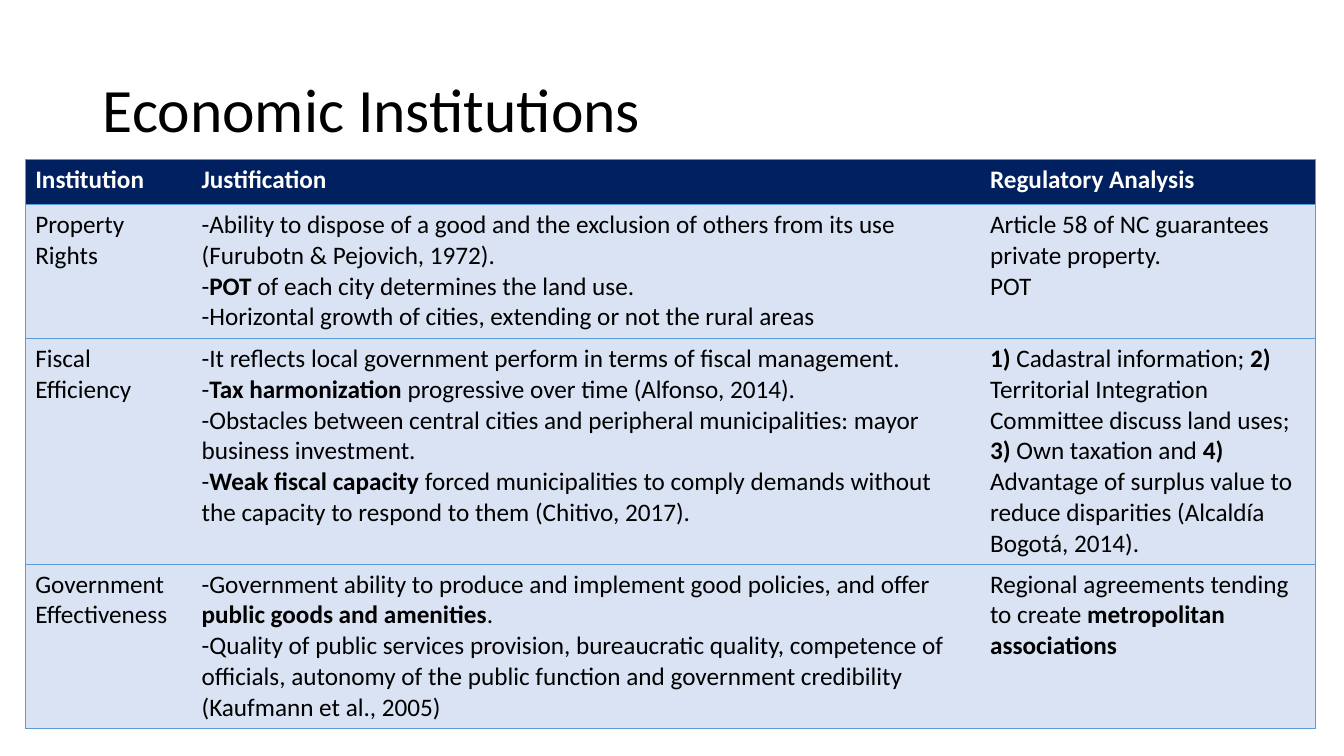
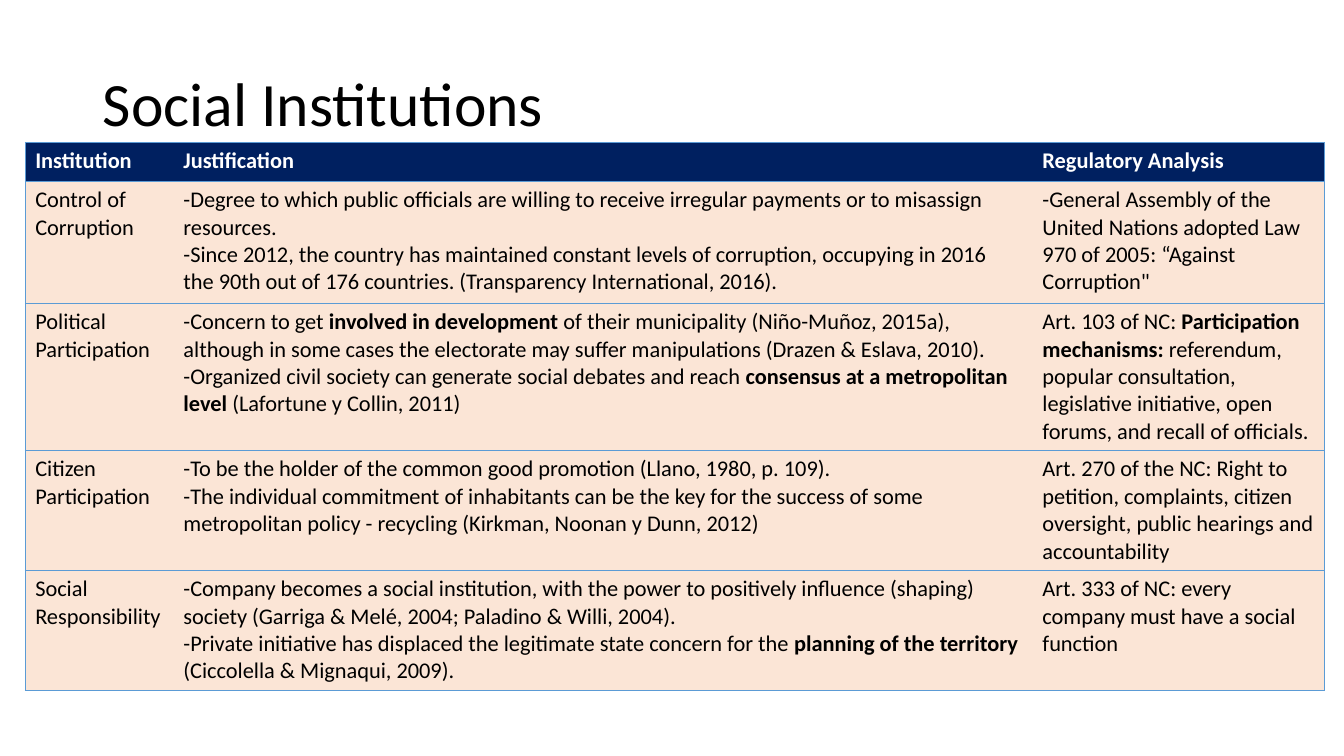
from pptx import Presentation
from pptx.dml.color import RGBColor
from pptx.enum.text import MSO_ANCHOR, MSO_AUTO_SIZE, PP_ALIGN
from pptx.oxml import parse_xml
from pptx.oxml.ns import nsdecls
from pptx.util import Inches, Pt

FONT = "Calibri"
BLACK, WHITE = "000000", "FFFFFF"
NAVY, RULE_BLUE = "002060", "5B9BD5"
PALE_BLUE, PALE_ORANGE = "DAE3F3", "FBE5D6"
TABLE_LEFT, TITLE_TOP = 0.25, 0.65
HEADINGS = (["Institution"], ["Justification"], ["Regulatory Analysis"])

ECONOMIC_ROWS = [
    (["Property Rights"],
     ["-Ability to dispose of a good and the exclusion of others from its use "
      "(Furubotn & Pejovich, 1972).",
      "-**POT** of each city determines the land use.",
      "-Horizontal growth of cities, extending or not the rural areas"],
     ["Article 58 of NC guarantees private property.", "POT"]),
    (["Fiscal Efficiency"],
     ["-It reflects local government perform in terms of fiscal management.",
      "-**Tax harmonization **progressive over time (Alfonso, 2014).",
      "-Obstacles between central cities and peripheral municipalities: "
      "mayor business investment.",
      "-**Weak fiscal capacity **forced municipalities to comply demands "
      "without the capacity to respond to them (Chitivo, 2017)."],
     ["**1)** Cadastral information; **2)** Territorial Integration Committee "
      "discuss land uses; **3)** Own taxation and **4) **Advantage of surplus "
      "value to reduce disparities (Alcaldía Bogotá, 2014)."]),
    (["Government Effectiveness"],
     ["-Government ability to produce and implement good policies, and offer "
      "**public goods and amenities**.",
      "-Quality of public services provision, bureaucratic quality, "
      "competence of officials, autonomy of the public function and "
      "government credibility (Kaufmann et al., 2005)"],
     ["Regional agreements tending to create **metropolitan associations**"]),
]

SOCIAL_ROWS = [
    (["Control of Corruption"],
     ["-Degree to which public officials are willing to receive irregular "
      "payments or to misassign resources.",
      "-Since 2012, the country has maintained constant levels of corruption, "
      "occupying in 2016 the 90th out of 176 countries. "
      "(Transparency International, 2016)."],
     ["-General Assembly of the United Nations adopted Law 970 of 2005: "
      "“Against Corruption\""]),
    (["Political Participation"],
     ["-Concern to get **involved in development **of their municipality "
      "(Niño-Muñoz, 2015a), although in some cases the electorate may suffer "
      "manipulations (Drazen & Eslava, 2010).",
      "-Organized civil society can generate social debates and reach "
      "**consensus at a metropolitan level** (Lafortune y Collin, 2011)"],
     ["Art. 103 of NC: **Participation mechanisms: **referendum, popular "
      "consultation, legislative initiative, open forums, and recall of "
      "officials."]),
    (["Citizen Participation"],
     ["-To be the holder of the common good promotion (Llano, 1980, p. 109).",
      "-The individual commitment of inhabitants can be the key for the "
      "success of some metropolitan policy - recycling "
      "(Kirkman, Noonan y Dunn, 2012)"],
     ["Art. 270 of the NC: Right to petition, complaints, citizen oversight, "
      "public hearings and accountability"]),
    (["Social Responsibility"],
     ["-Company becomes a social institution, with the power to positively "
      "influence (shaping) society (Garriga & Melé, 2004; "
      "Paladino & Willi, 2004).",
      "-Private initiative has displaced the legitimate state concern for the "
      "**planning of the territory **(Ciccolella & Mignaqui, 2009)."],
     ["Art. 333 of NC: every company must have a social function"]),
]


def rgb(value):
    """Turn a hex string into a colour."""
    return RGBColor.from_string(value)


def add_run(paragraph, text, size, color, bold=False):
    """Add one formatted run to a paragraph."""
    run = paragraph.add_run()
    run.text = text
    run.font.name = FONT
    run.font.size = Pt(size)
    run.font.bold = bold
    run.font.color.rgb = rgb(color)


def set_title(slide, text, height):
    """Place and format the slide title."""
    title = slide.shapes.title
    title.left, title.top = Inches(0.92), Inches(TITLE_TOP)
    title.width, title.height = Inches(11.5), Inches(height)
    frame = title.text_frame
    frame.word_wrap = True
    frame.auto_size = MSO_AUTO_SIZE.NONE
    frame.vertical_anchor = MSO_ANCHOR.MIDDLE
    paragraph = frame.paragraphs[0]
    paragraph.alignment = PP_ALIGN.LEFT
    paragraph.line_spacing = 0.9
    add_run(paragraph, text, 44, BLACK)


def set_borders(cell, visible_sides):
    """Rule the named sides of a cell and clear the others."""
    properties = cell._tc.get_or_add_tcPr()
    for side in "LRTB":
        if side in visible_sides:
            line = f'<a:solidFill><a:srgbClr val="{RULE_BLUE}"/></a:solidFill>'
        else:
            line = "<a:noFill/>"
        properties.append(parse_xml(
            f'<a:ln{side} {nsdecls("a")} w="{Pt(0.5)}">{line}</a:ln{side}>'))


def fill_cell(cell, paragraphs, size, color, fill, bold=False):
    """Write a cell's paragraphs, with ** around bold phrases."""
    cell.fill.solid()
    cell.fill.fore_color.rgb = rgb(fill)
    frame = cell.text_frame
    for number, text in enumerate(paragraphs):
        paragraph = frame.add_paragraph() if number else frame.paragraphs[0]
        for part, phrase in enumerate(text.split("**")):
            if phrase:
                add_run(paragraph, phrase, size, color, bold or part % 2 == 1)


def add_institution_table(slide, top, widths, heights, rows, size, fill):
    """Add the ruled table with its navy heading row."""
    table = slide.shapes.add_table(
        len(heights), len(widths), Inches(TABLE_LEFT), Inches(top),
        Inches(sum(widths)), Inches(sum(heights))).table
    table.horz_banding = False
    for column, width in zip(table.columns, widths):
        column.width = Inches(width)
    for row, height in zip(table.rows, heights):
        row.height = Inches(height)
    for row_number, contents in enumerate([HEADINGS] + rows):
        heading = row_number == 0
        for column_number, paragraphs in enumerate(contents):
            cell = table.cell(row_number, column_number)
            set_borders(cell, ("LTB", "TB", "RTB")[column_number])
            fill_cell(cell, paragraphs, size, WHITE if heading else BLACK,
                      NAVY if heading else fill, heading)


def add_institution_slide(deck, title, table_top, title_height, **table):
    """Add a title-only slide with its institution table."""
    slide = deck.slides.add_slide(deck.slide_layouts[5])
    set_title(slide, title, title_height)
    add_institution_table(slide, table_top, **table)


def main():
    """Build and save the deck."""
    deck = Presentation()
    deck.slide_width, deck.slide_height = Inches(13.33), Inches(7.5)
    add_institution_slide(
        deck, "Economic Institutions", 1.58, 0.93,
        widths=(1.65, 7.82, 3.33), heights=(0.45, 1.33, 2.23, 1.63),
        rows=ECONOMIC_ROWS, size=18, fill=PALE_BLUE)
    add_institution_slide(
        deck, "Social Institutions", 1.41, 0.82,
        widths=(1.47, 8.52, 2.9), heights=(0.39, 1.21, 1.46, 1.19, 1.19),
        rows=SOCIAL_ROWS, size=16, fill=PALE_ORANGE)
    deck.save("out.pptx")


if __name__ == "__main__":
    main()
